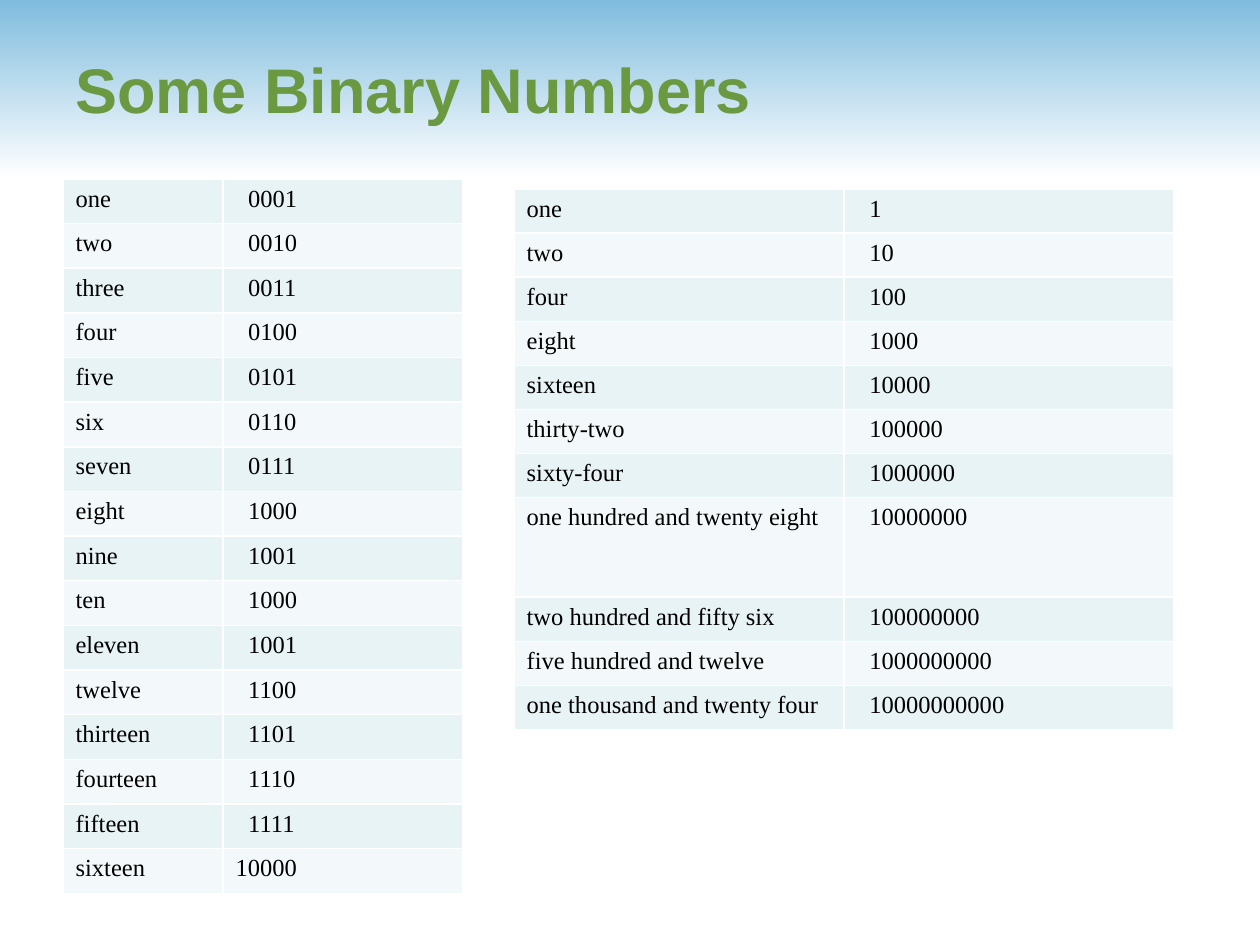
from lxml import etree
from pptx import Presentation
from pptx.dml.color import RGBColor
from pptx.enum.shapes import MSO_SHAPE
from pptx.enum.text import MSO_ANCHOR, PP_ALIGN
from pptx.oxml.ns import qn
from pptx.util import Inches, Pt

RECTANGLE = MSO_SHAPE.RECTANGLE
MIDDLE = MSO_ANCHOR.MIDDLE
LEFT = PP_ALIGN.LEFT
SKY = RGBColor(0x80, 0xBC, 0xDE)
WHITE = RGBColor(0xFF, 0xFF, 0xFF)
GREEN = RGBColor(0x6B, 0x99, 0x41)
BLACK = RGBColor(0, 0, 0)
BANDS = (RGBColor(0xE7, 0xF3, 0xF4), RGBColor(0xF3, 0xF9, 0xFA))
TITLE_FONT = {"name": "Arial", "size": Pt(36), "bold": True}
CELL_FONT = {"name": "Times New Roman", "size": Pt(14), "bold": False}
DIGIT = 0.1
MARGIN = 0.1

COUNTING = [
    ("one", "0001"), ("two", "0010"), ("three", "0011"), ("four", "0100"),
    ("five", "0101"), ("six", "0110"), ("seven", "0111"), ("eight", "1000"),
    ("nine", "1001"), ("ten", "1000"), ("eleven", "1001"), ("twelve", "1100"),
    ("thirteen", "1101"), ("fourteen", "1110"), ("fifteen", "1111"),
    ("sixteen", "10000"),
]
POWER_NAMES = [
    "one", "two", "four", "eight", "sixteen", "thirty-two", "sixty-four",
    "one hundred and twenty eight", "two hundred and fifty six",
    "five hundred and twelve", "one thousand and twenty four",
]
POWERS = [(name, f"{2 ** power:b}") for power, name in enumerate(POWER_NAMES)]


def style_font(font, formats, color):
    """Apply a dict of format values and a colour to a font."""
    for attribute, value in formats.items():
        setattr(font, attribute, value)
    font.color.rgb = color


def add_sky_band(slide, box):
    """Place the gradient band behind everything else on the slide."""
    band = slide.shapes.add_shape(RECTANGLE, *map(Inches, box))
    band.shadow.inherit = False
    band.line.fill.background()
    band.fill.gradient()
    band.fill.gradient_angle = 270
    for stop, color in zip(band.fill.gradient_stops, (SKY, WHITE)):
        stop.color.rgb = color
    slide.shapes._spTree.insert(2, band._element)


def fill_title(slide, box, wording):
    """Move and format the title placeholder."""
    title = slide.shapes.title
    title.left, title.top, title.width, title.height = map(Inches, box)
    frame = title.text_frame
    frame.text = wording
    frame.vertical_anchor = MIDDLE
    heading = frame.paragraphs[0]
    heading.alignment = LEFT
    style_font(heading.runs[0].font, TITLE_FONT, GREEN)


def add_borders(cell):
    """Draw a one-point white line on each side of a cell."""
    properties = cell._tc.get_or_add_tcPr()
    for position, side in enumerate(("a:lnL", "a:lnR", "a:lnT", "a:lnB")):
        border = etree.Element(qn(side), w=str(Pt(1)))
        solid = etree.SubElement(border, qn("a:solidFill"))
        etree.SubElement(solid, qn("a:srgbClr"), val=str(WHITE))
        properties.insert(position, border)


def fill_cell(cell, wording, band_color, indent):
    """Write one cell with its indent, band colour and borders."""
    cell.text = wording
    cell.margin_left = Inches(MARGIN + indent)
    cell.fill.solid()
    cell.fill.fore_color.rgb = band_color
    style_font(cell.text_frame.paragraphs[0].runs[0].font, CELL_FONT, BLACK)
    add_borders(cell)


def add_number_table(slide, box, numbers, widths, heights, indents):
    """Place a banded table of number names and their binary digits."""
    table = slide.shapes.add_table(len(numbers), 2, *map(Inches, box)).table
    table.first_row = table.horz_banding = False
    for column, width in zip(table.columns, widths):
        column.width = Inches(width)
    for index, (name, digits) in enumerate(numbers):
        table.rows[index].height = Inches(heights[index])
        band_color = BANDS[index % 2]
        fill_cell(table.cell(index, 0), name, band_color, 0)
        fill_cell(table.cell(index, 1), digits, band_color, indents[index])


def main():
    """Build the slide and save it."""
    deck = Presentation()
    deck.slide_width, deck.slide_height = Inches(10), Inches(7.5)
    slide = deck.slides.add_slide(deck.slide_layouts[5])
    add_sky_band(slide, (0, 0, 10, 1.42))
    fill_title(slide, (0.5, 0.08, 9.08, 1.25), "Some Binary Numbers")

    power_heights = [0.79 if name == "one hundred and twenty eight" else 0.35
                     for name in POWER_NAMES]
    add_number_table(slide, (4.08, 1.5, 5.25, sum(power_heights)), POWERS,
                     (2.62, 2.62), power_heights, [DIGIT] * len(POWERS))

    longest = max(len(digits) for _, digits in COUNTING)
    counting_indents = [DIGIT * (longest - len(digits)) for _, digits in COUNTING]
    counting_heights = [5.67 / len(COUNTING)] * len(COUNTING)
    add_number_table(slide, (0.5, 1.42, 3.17, 5.67), COUNTING,
                     (1.27, 1.9), counting_heights, counting_indents)
    deck.save("out.pptx")


if __name__ == "__main__":
    main()
